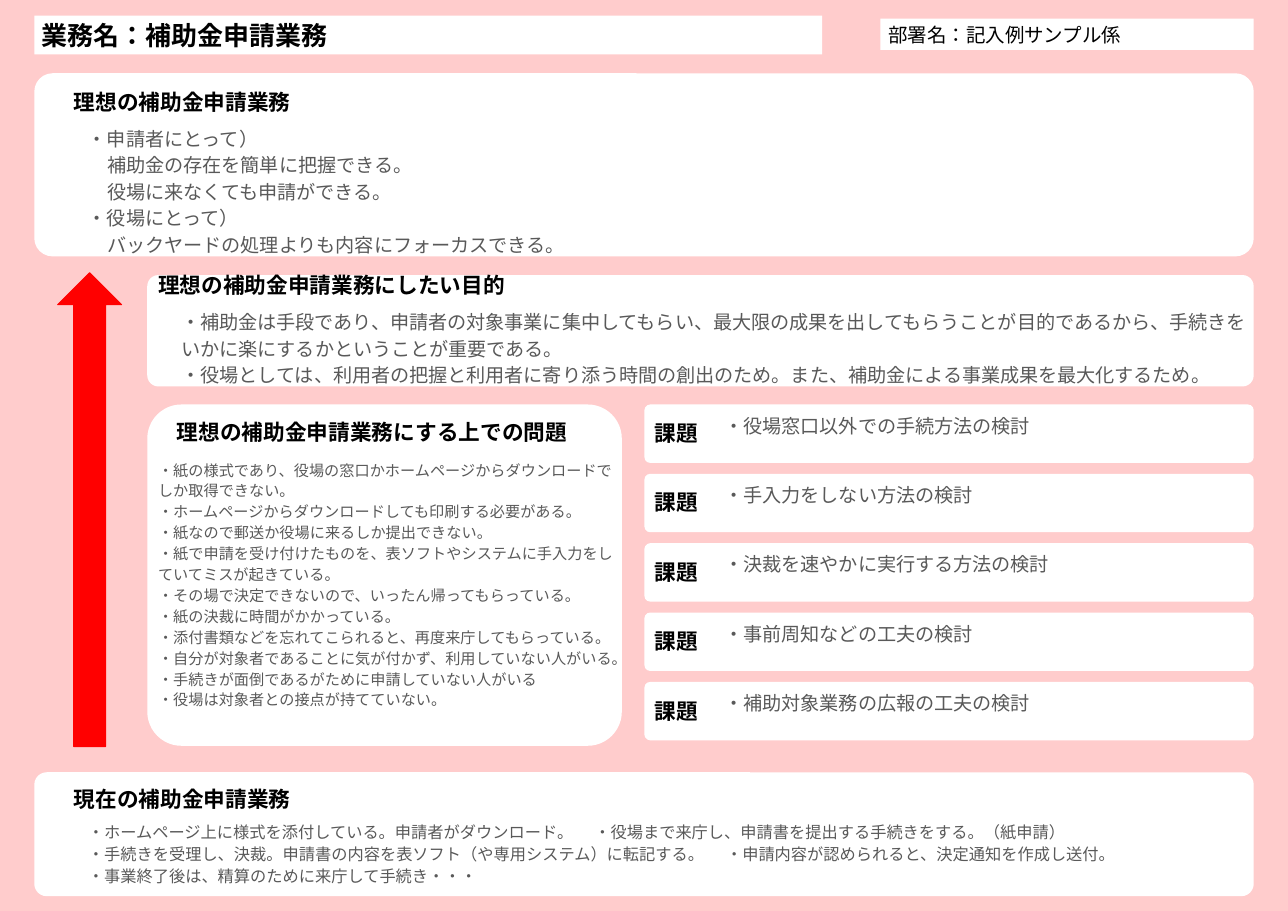
from lxml.etree import SubElement
from pptx import Presentation
from pptx.dml.color import RGBColor
from pptx.enum.lang import MSO_LANGUAGE_ID
from pptx.enum.shapes import MSO_SHAPE
from pptx.enum.text import MSO_ANCHOR, PP_ALIGN
from pptx.oxml.ns import qn
from pptx.util import Inches, Pt

HUES = {"back": "FFCCCC", "card": "FFFFFF", "arrow": "FF0000", "head": "000000", "body": "595959"}

STYLES = {
    "title": {"size": Pt(24), "bold": True, "name": "Calibri"},
    "dept": {"size": Pt(18), "bold": False, "name": "Calibri"},
    "head": {"size": Pt(20), "bold": True, "name": "Calibri"},
    "large": {"size": Pt(17.7), "bold": False, "name": "Lato"},
    "mid": {"size": Pt(15), "bold": False, "name": "Lato"},
    "small": {"size": Pt(14), "bold": False, "name": "Lato"},
}

BANNERS = [
    ((11.3, 0.24, 4.79, 0.4), "dept", "部署名：記入例サンプル係"),
    ((0.44, 0.2, 10.11, 0.5), "title", "業務名：補助金申請業務"),
]

PANELS = [
    {
        "card": (0.44, 0.94, 15.65, 2.35),
        "head": ((0.85, 1.09, 3.8, 0.44), "理想の補助金申請業務"),
        "body": (1.03, 1.49, 8.86, 1.73), "style": "large", "stops": [0.25],
        "lines": [
            "・申請者にとって）",
            "\t補助金の存在を簡単に把握できる。",
            "\t役場に来なくても申請ができる。",
            "・役場にとって）",
            "\tバックヤードの処理よりも内容にフォーカスできる。",
        ],
    },
    {
        "card": (1.89, 3.53, 14.2, 1.43),
        "head": ((1.93, 3.44, 5.21, 0.44), "理想の補助金申請業務にしたい目的"),
        "body": (2.23, 3.84, 13.87, 1.12), "style": "large", "stops": [],
        "lines": [
            "・補助金は手段であり、申請者の対象事業に集中してもらい、最大限の成果を出してもらうことが目的であるから、手続きをいかに楽にするかということが重要である。",
            "・役場としては、利用者の把握と利用者に寄り添う時間の創出のため。また、補助金による事業成果を最大化するため。",
        ],
    },
    {
        "card": (1.89, 5.19, 6.09, 4.38),
        "head": ((2.17, 5.33, 5.82, 0.44), "理想の補助金申請業務にする上での問題"),
        "body": (1.93, 5.78, 6.09, 3.71), "style": "small", "stops": [],
        "lines": [
            "・紙の様式であり、役場の窓口かホームページからダウンロードでしか取得できない。",
            "・ホームページからダウンロードしても印刷する必要がある。",
            "・紙なので郵送か役場に来るしか提出できない。",
            "・紙で申請を受け付けたものを、表ソフトやシステムに手入力をしていてミスが起きている。",
            "・その場で決定できないので、いったん帰ってもらっている。",
            "・紙の決裁に時間がかかっている。",
            "・添付書類などを忘れてこられると、再度来庁してもらっている。",
            "・自分が対象者であることに気が付かず、利用していない人がいる。",
            "・手続きが面倒であるがために申請していない人がいる",
            "・役場は対象者との接点が持てていない。",
        ],
    },
    {
        "card": (0.44, 9.91, 15.65, 1.59),
        "head": ((0.85, 10.03, 3.8, 0.44), "現在の補助金申請業務"),
        "body": (1.03, 10.41, 14.93, 1.12), "style": "mid", "stops": [6.5, 8.19],
        "lines": [
            "・ホームページ上に様式を添付している。申請者がダウンロード。\t・役場まで来庁し、申請書を提出する手続きをする。（紙申請）",
            "・手続きを受理し、決裁。申請書の内容を表ソフト（や専用システム）に転記する。\t・申請内容が認められると、決定通知を作成し送付。",
            "・事業終了後は、精算のために来庁して手続き・・・",
        ],
    },
]

TASK = "課題"
TASKS = [
    "・役場窓口以外での手続方法の検討",
    "・手入力をしない方法の検討",
    "・決裁を速やかに実行する方法の検討",
    "・事前周知などの工夫の検討",
    "・補助対象業務の広報の工夫の検討",
]
TOP, STEP = 5.19, 0.89
ARROW = (0.74, 3.5, 0.82, 6.08)

deck = Presentation()
deck.slide_width, deck.slide_height = Inches(16.53), Inches(11.69)
slide = deck.slides.add_slide(deck.slide_layouts[6])
slide.background.fill.solid()
slide.background.fill.fore_color.rgb = RGBColor.from_string(HUES["back"])


def draw(kind, box, hue="card"):
    shape = slide.shapes.add_shape(kind, *map(Inches, box))
    shape.shadow.inherit = False
    shape.fill.solid()
    shape.fill.fore_color.rgb = RGBColor.from_string(HUES[hue])
    shape.line.fill.background()
    return shape


def card(box):
    draw(MSO_SHAPE.ROUNDED_RECTANGLE, box).adjustments[0] = 0.1


def write(shape, lines, style, hue="head", pad=0.05, space=1.0, stops=()):
    frame = shape.text_frame
    form = {
        "word_wrap": True, "vertical_anchor": MSO_ANCHOR.TOP,
        "margin_left": Inches(0.1), "margin_right": Inches(0.1),
        "margin_top": Inches(pad), "margin_bottom": Inches(pad),
    }
    for key, value in form.items():
        setattr(frame, key, value)
    frame.text = "\n".join(lines)
    for para in frame.paragraphs:
        para.alignment, para.line_spacing = PP_ALIGN.LEFT, space
        if stops:
            tabs = SubElement(para._p.get_or_add_pPr(), qn("a:tabLst"))
            for stop in stops:
                SubElement(tabs, qn("a:tab"), pos=str(Inches(stop)), algn="l")
        for run in para.runs:
            for key, value in STYLES[style].items():
                setattr(run.font, key, value)
            run.font.language_id = MSO_LANGUAGE_ID.JAPANESE
            run.font.color.rgb = RGBColor.from_string(HUES[hue])
            SubElement(run._r.rPr, qn("a:ea"), typeface=STYLES[style]["name"])


def label(box, text):
    write(slide.shapes.add_textbox(*map(Inches, box)), [text], "head")


def body(box, lines, style, stops=()):
    write(slide.shapes.add_textbox(*map(Inches, box)), lines, style, "body", 0.1, 1.15, stops)


for box, style, text in BANNERS:
    write(draw(MSO_SHAPE.RECTANGLE, box), [text], style)

arrow = draw(MSO_SHAPE.UP_ARROW, ARROW, "arrow")
arrow.line.color.rgb = RGBColor.from_string(HUES["arrow"])
arrow.line.width = Pt(1)

for panel in PANELS:
    card(panel["card"])
    label(*panel["head"])
    body(panel["body"], panel["lines"], panel["style"], panel["stops"])

for row, text in enumerate(TASKS):
    top = TOP + row * STEP
    card((8.27, top, 7.82, 0.75))
    label((8.3, top + 0.15, 0.82, 0.44), TASK)
    body((9.2, top - 0.02, 6.76, 0.75), [text], "large")

deck.save("out.pptx")
